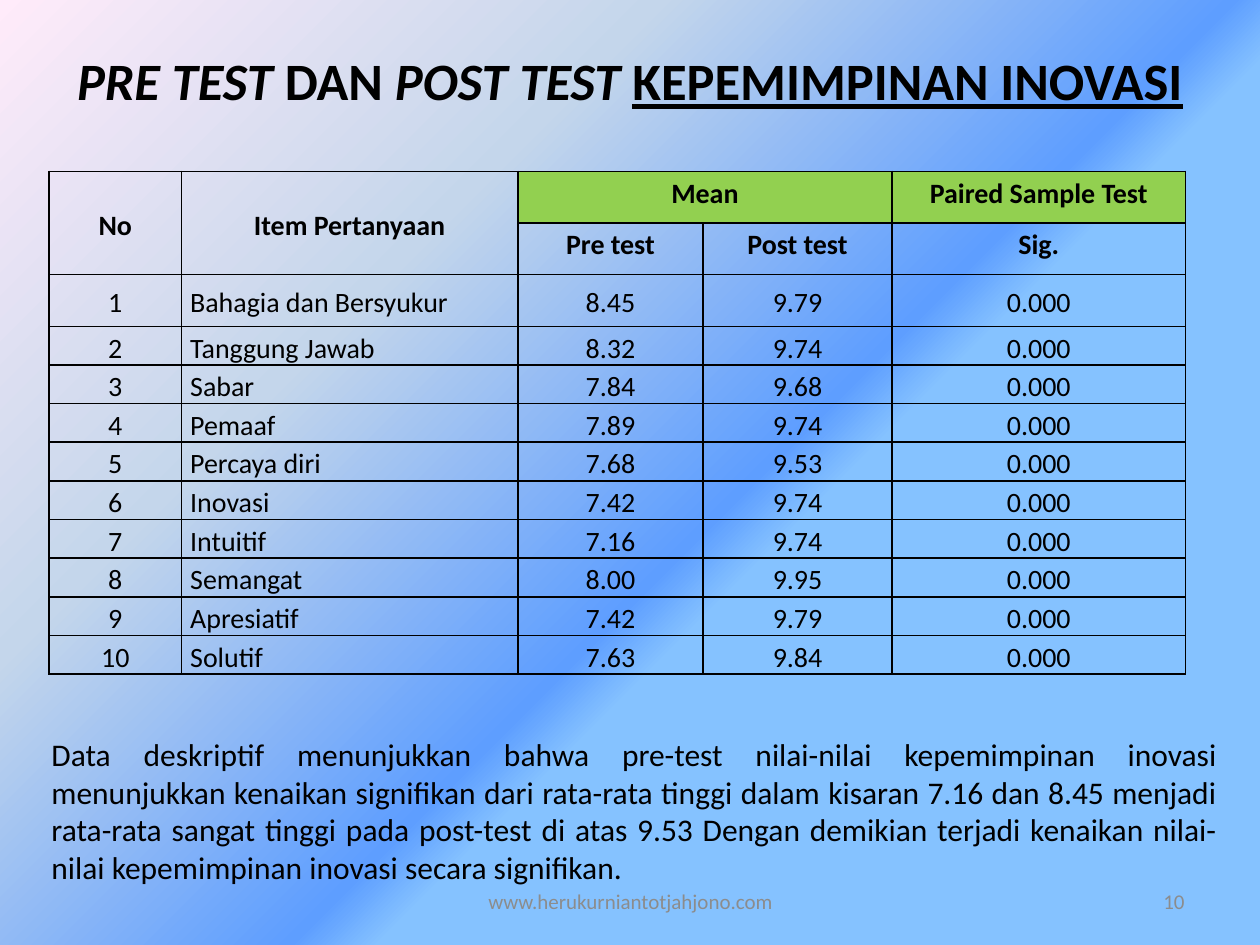
from dataclasses import dataclass

from pptx import Presentation
from pptx.dml.color import RGBColor
from pptx.enum.text import MSO_ANCHOR as Anchor, PP_ALIGN as Align
from pptx.oxml import parse_xml
from pptx.oxml.ns import nsdecls
from pptx.util import Inches, Pt

WIDTH, HEIGHT = 10, 7.5
FONT = "Calibri"
COLORS = {"text": "000000", "muted": "8C8C8C", "heading": "92D050"}
GRADIENT = [(40, "85C2FF"), (44, "5E9EFF"), (70, "C4D6EB"), (100, "FFEBFA")]


@dataclass
class Span:
    text: str
    italic: bool = False
    underline: bool = False


@dataclass
class TextBlock:
    """A text box placed by shares of the page size."""
    left: float
    top: float
    width: float
    height: float
    spans: list[Span]
    size: int
    align: Align
    anchor: Anchor = Anchor.MIDDLE
    color: str = "text"
    bold: bool = False


@dataclass
class HeadCell:
    row: int
    column: int
    text: str
    rows: int = 1
    columns: int = 1
    fill: str = ""


BLOCKS = [
    TextBlock(0.05, 0.023, 0.9, 0.123,
              [Span("PRE TEST ", italic=True), Span("DAN "),
               Span("POST TEST ", italic=True),
               Span("KEPEMIMPINAN INOVASI", underline=True)],
              30, Align.CENTER, bold=True),
    TextBlock(0.031, 0.771, 0.945, 0.175,
              [Span("Data deskriptif menunjukkan bahwa pre-test nilai-nilai "
                    "kepemimpinan inovasi menunjukkan kenaikan signifikan dari "
                    "rata-rata tinggi dalam kisaran 7.16 dan 8.45 menjadi "
                    "rata-rata sangat tinggi pada post-test di atas 9.53 Dengan "
                    "demikian terjadi kenaikan nilai-nilai kepemimpinan inovasi "
                    "secara signifikan.")],
              18, Align.JUSTIFY, Anchor.TOP),
    TextBlock(0.717, 0.927, 0.233, 0.053, [Span("10")],
              12, Align.RIGHT, color="muted"),
    TextBlock(0.342, 0.927, 0.317, 0.053, [Span("www.herukurniantotjahjono.com")],
              12, Align.CENTER, color="muted"),
]

COLUMN_WIDTHS = [1.05, 2.67, 1.47, 1.5, 2.33]
TALL_ROW, ROW = 0.41, 0.2
TALL_ROWS = 3
HEAD_ROWS = 2
HEAD = [
    HeadCell(0, 0, "No", rows=2),
    HeadCell(0, 1, "Item Pertanyaan", rows=2),
    HeadCell(0, 2, "Mean", columns=2, fill="heading"),
    HeadCell(0, 4, "Paired Sample Test", fill="heading"),
    HeadCell(1, 2, "Pre test"),
    HeadCell(1, 3, "Post test"),
    HeadCell(1, 4, "Sig."),
]
SCORES = [
    ("Bahagia dan Bersyukur", "8.45", "9.79"),
    ("Tanggung Jawab", "8.32", "9.74"),
    ("Sabar", "7.84", "9.68"),
    ("Pemaaf", "7.89", "9.74"),
    ("Percaya diri", "7.68", "9.53"),
    ("Inovasi", "7.42", "9.74"),
    ("Intuitif", "7.16", "9.74"),
    ("Semangat", "8.00", "9.95"),
    ("Apresiatif", "7.42", "9.79"),
    ("Solutif", "7.63", "9.84"),
]
SIGNIFICANCE = "0.000"


def style_font(font, size: int, color: str, bold: bool) -> None:
    font.name, font.size, font.bold = FONT, Pt(size), bold
    font.color.rgb = RGBColor.from_string(COLORS[color])


def paint_background(page) -> None:
    stops = "".join(
        f'<a:gs pos="{share * 1000}"><a:srgbClr val="{color}"/></a:gs>'
        for share, color in GRADIENT)
    background = parse_xml(
        f'<p:bg {nsdecls("p", "a")}><p:bgPr><a:gradFill><a:gsLst>{stops}</a:gsLst>'
        '<a:path path="circle"><a:fillToRect l="100000" t="100000"/></a:path>'
        '<a:tileRect r="-100000" b="-100000"/>'
        '</a:gradFill><a:effectLst/></p:bgPr></p:bg>')
    page.element.cSld.insert(0, background)


def add_text(page, block: TextBlock) -> None:
    box = page.shapes.add_textbox(
        Inches(block.left * WIDTH), Inches(block.top * HEIGHT),
        Inches(block.width * WIDTH), Inches(block.height * HEIGHT))
    frame = box.text_frame
    frame.word_wrap = True
    frame.vertical_anchor = block.anchor
    para = frame.paragraphs[0]
    para.alignment = block.align
    for span in block.spans:
        run = para.add_run()
        run.text = span.text
        style_font(run.font, block.size, block.color, block.bold)
        run.font.italic, run.font.underline = span.italic, span.underline


def format_cell(cell) -> None:
    """Clear the fill, set the insets and draw thin borders."""
    cell.margin_left = cell.margin_right = Inches(0.07)
    cell.margin_top = cell.margin_bottom = 0
    cell.fill.background()
    properties = cell._tc.get_or_add_tcPr()
    for place, side in enumerate(("lnL", "lnR", "lnT", "lnB")):
        properties.insert(place, parse_xml(
            f'<a:{side} {nsdecls("a")} w="{Pt(1)}"><a:solidFill>'
            f'<a:srgbClr val="{COLORS["text"]}"/></a:solidFill></a:{side}>'))


def write_cell(cell, text: str, align: Align, anchor: Anchor,
               bold: bool = False) -> None:
    cell.text_frame.text = text
    cell.vertical_anchor = anchor
    para = cell.text_frame.paragraphs[0]
    para.alignment, para.line_spacing = align, 1.15
    style_font(para.runs[0].font, 16, "text", bold)


def add_score_table(page) -> None:
    row_count = HEAD_ROWS + len(SCORES)
    heights = [TALL_ROW if i < TALL_ROWS else ROW for i in range(row_count)]
    table = page.shapes.add_table(
        row_count, len(COLUMN_WIDTHS), Inches(0.39), Inches(1.36),
        Inches(sum(COLUMN_WIDTHS)), Inches(sum(heights))).table
    table.first_row = table.horz_banding = False
    for column, width in zip(table.columns, COLUMN_WIDTHS):
        column.width = Inches(width)
    for row, height in zip(table.rows, heights):
        row.height = Inches(height)
        for cell in row.cells:
            format_cell(cell)

    # Heading rows
    for head in HEAD:
        cell = table.cell(head.row, head.column)
        if head.rows > 1 or head.columns > 1:
            cell.merge(table.cell(head.row + head.rows - 1,
                                  head.column + head.columns - 1))
        anchor = Anchor.MIDDLE if head.rows > 1 else Anchor.TOP
        write_cell(cell, head.text, Align.CENTER, anchor, bold=True)
        if head.fill:
            cell.fill.solid()
            cell.fill.fore_color.rgb = RGBColor.from_string(COLORS[head.fill])

    # Numbered score rows
    for number, score in enumerate(SCORES, start=1):
        row = HEAD_ROWS + number - 1
        anchor = Anchor.MIDDLE if row < TALL_ROWS else Anchor.TOP
        for column, text in enumerate((str(number), *score, SIGNIFICANCE)):
            align = Align.LEFT if column == 1 else Align.CENTER
            write_cell(table.cell(row, column), text, align, anchor)


def main() -> None:
    deck = Presentation()
    deck.slide_width, deck.slide_height = Inches(WIDTH), Inches(HEIGHT)
    page = deck.slides.add_slide(deck.slide_layouts[6])
    paint_background(page)
    for block in BLOCKS:
        add_text(page, block)
    add_score_table(page)
    deck.save("out.pptx")


if __name__ == "__main__":
    main()
